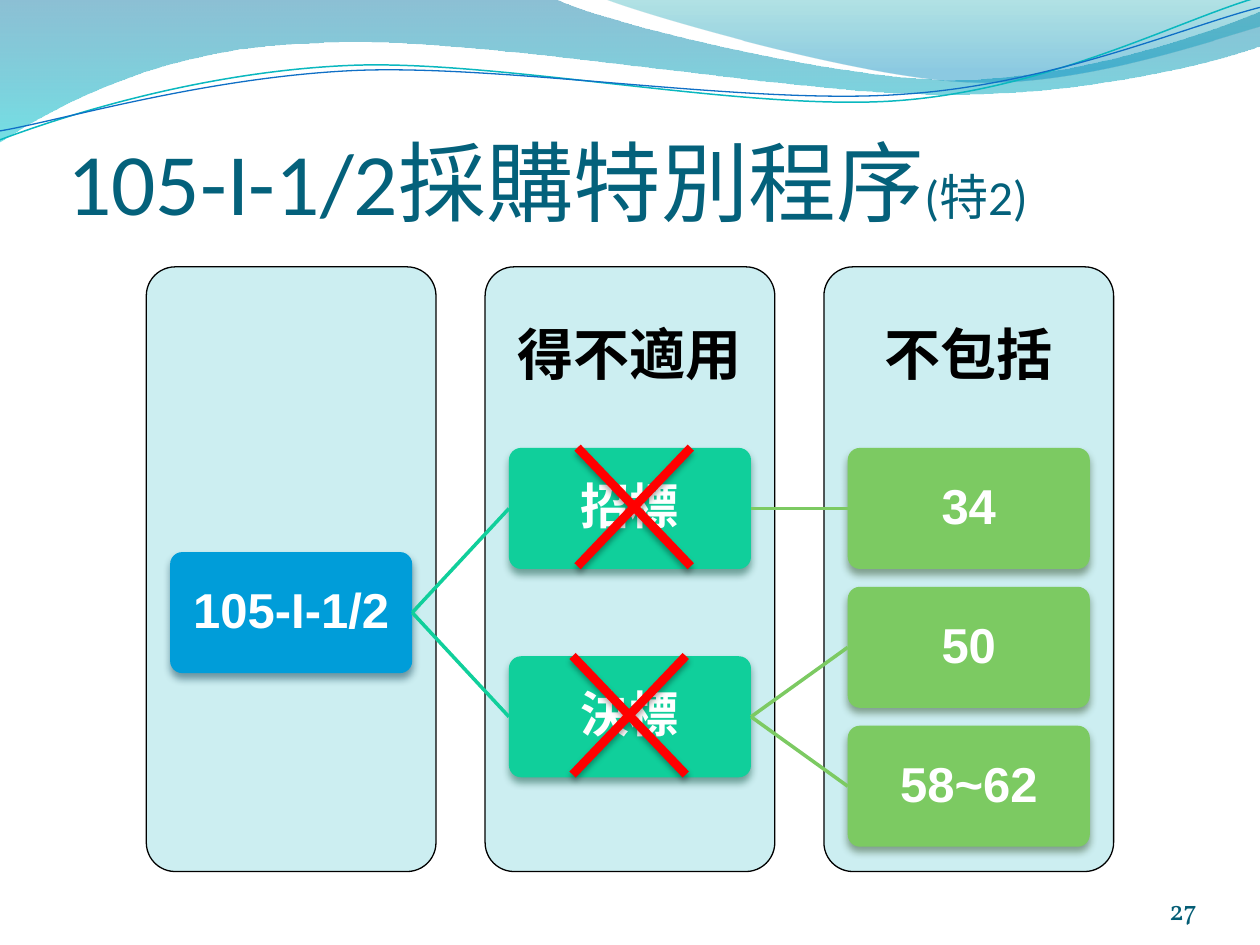
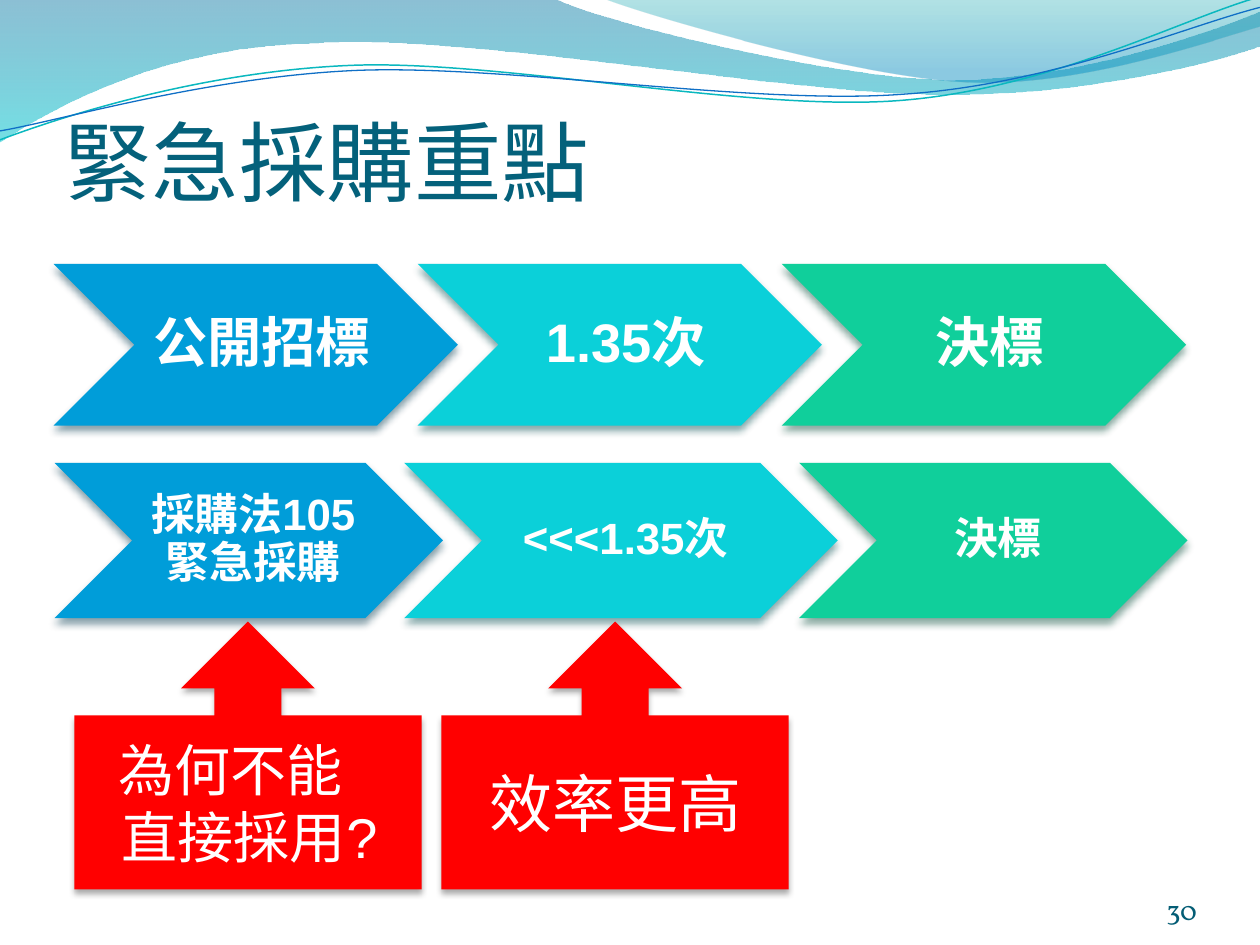
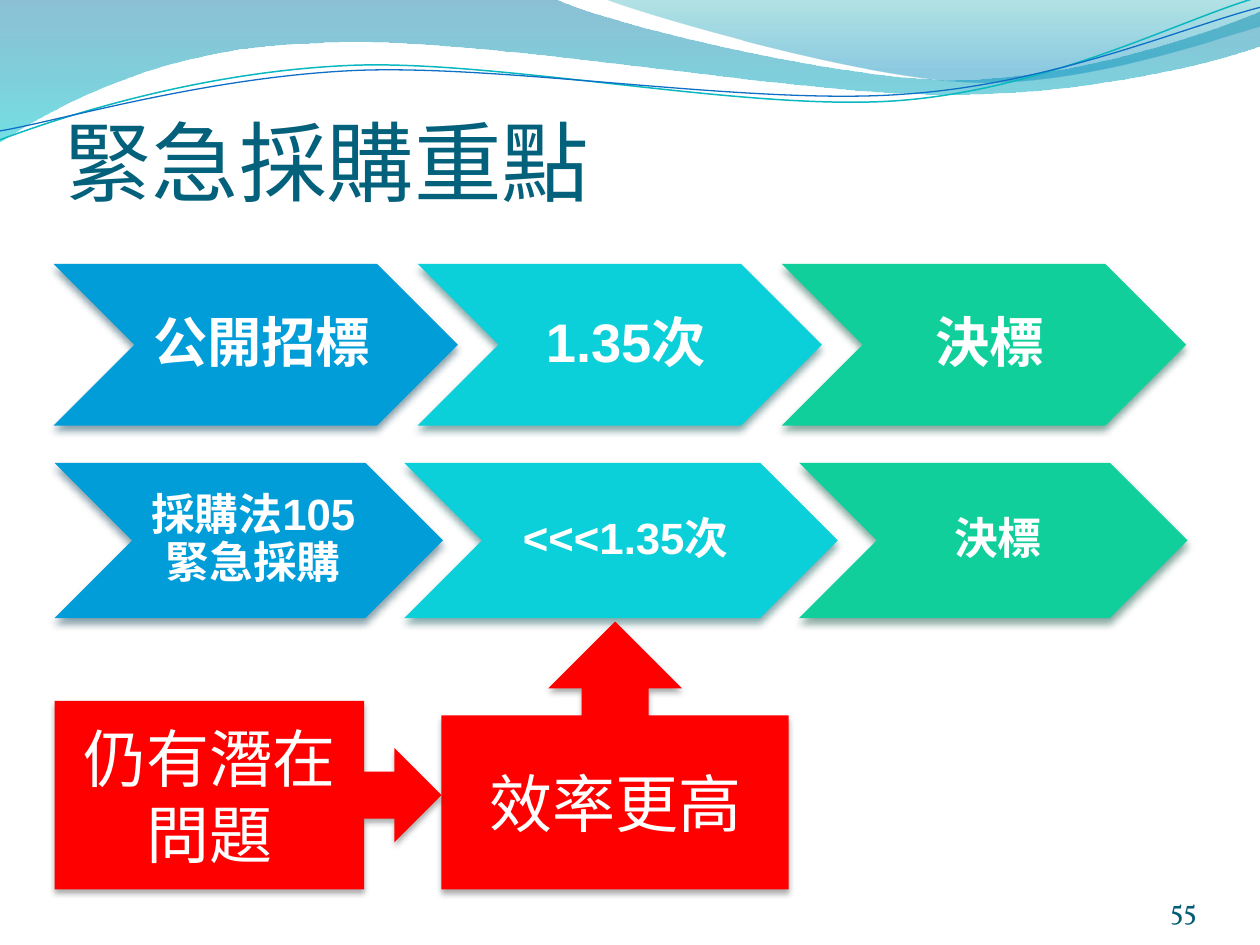
from dataclasses import dataclass

from pptx import Presentation
from pptx.dml.color import RGBColor
from pptx.enum.shapes import MSO_CONNECTOR, MSO_SHAPE
from pptx.enum.text import MSO_ANCHOR, PP_ALIGN
from pptx.oxml.ns import qn
from pptx.oxml.xmlchemy import OxmlElement
from pptx.shapes.autoshape import Shape
from pptx.slide import Slide
from pptx.util import Cm, Pt

ROUNDED = MSO_SHAPE.ROUNDED_RECTANGLE
CHEVRON = MSO_SHAPE.CHEVRON
CROSS = MSO_SHAPE.MATH_MULTIPLY
UP_CALLOUT = MSO_SHAPE.UP_ARROW_CALLOUT
RIGHT_CALLOUT = MSO_SHAPE.RIGHT_ARROW_CALLOUT
STRAIGHT = MSO_CONNECTOR.STRAIGHT
LEFT, CENTER, RIGHT = PP_ALIGN.LEFT, PP_ALIGN.CENTER, PP_ALIGN.RIGHT
MIDDLE, BOTTOM = MSO_ANCHOR.MIDDLE, MSO_ANCHOR.BOTTOM
LEFT_SIDE, RIGHT_SIDE = 1, 3

Point = tuple[float, float]
Margins = tuple[float, float, float, float]


@dataclass(frozen=True)
class TextStyle:
    size: float
    color: str
    font: str = "Arial"
    bold: bool = False
    align: PP_ALIGN = CENTER
    anchor: MSO_ANCHOR = MIDDLE
    spacing: float = 1.0
    margins: Margins = (0.25, 0.13, 0.25, 0.13)
    hanging: float = 0


@dataclass(frozen=True)
class Shadow:
    color: str
    opacity: int = 48
    blur: float = 4.5
    distance: float = 3


@dataclass(frozen=True)
class Accent:
    fill: str
    shadow: Shadow


@dataclass(frozen=True)
class Theme:
    blue = Accent("009DD9", Shadow("00374C"))
    cyan = Accent("0BD0D9", Shadow("024B4E"))
    teal = Accent("10CF9B", Shadow("044A37"))
    green = Accent("7CCA62", Shadow("2B4821"))
    red = Accent("FF0000", Shadow("000000", 32, 3.5, 2.2))
    column_fill = "CCEEF1"
    column_line = "000000"
    title = TextStyle(50, "04617B", "Calibri", align=LEFT, anchor=BOTTOM, margins=(0, 0.13, 0, 0))
    title_note_size = 28
    page_number = TextStyle(16, "045D75", "Vollkorn", align=RIGHT, anchor=BOTTOM, margins=(0, 0, 0, 0))
    heading = TextStyle(32, "000000", bold=True, spacing=0.9, margins=(0.63,) * 4)
    node = TextStyle(28, "FFFFFF", bold=True, spacing=0.9, margins=(0.05,) * 4)
    step = TextStyle(31, "FFFFFF", bold=True, spacing=0.9, margins=(0.36, 0.12, 0.12, 0.12))
    small_step = TextStyle(25, "FFFFFF", bold=True, spacing=0.9, margins=(0.23, 0.1, 0.05, 0.1))
    callout = TextStyle(36, "FFFFFF")
    small_callout = TextStyle(32, "FFFFFF", margins=(0, 0.13, 0.7, 0.13), hanging=0.77)


THEME = Theme()


@dataclass(frozen=True)
class Stop:
    position: float
    color: str
    opacity: int


@dataclass(frozen=True)
class Wave:
    start: Point
    legs: tuple[tuple[Point, ...], ...]
    stops: tuple[Stop, ...] = ()
    line: str = ""
    line_width: float = 0


@dataclass(frozen=True)
class Frame:
    left: float
    top: float
    width: float
    height: float


@dataclass(frozen=True)
class Node:
    text: str
    column: int
    row: float
    accent: Accent
    parent: int | None = None


@dataclass(frozen=True)
class Process:
    left: float
    top: float
    height: float
    overlap: float
    style: TextStyle
    steps: tuple[tuple[str, float], ...]


@dataclass(frozen=True)
class Callout:
    text: str
    preset: MSO_SHAPE
    frame: Frame
    style: TextStyle
    adjustments: tuple[float, ...] = ()


WAVES = (
    Wave((0, 0), (
        ((11.18, -0.03),),
        ((12.09, 0.43), (16.87, 1.6), (19.25, 1.6)),
        ((21.67, 1.6), (24.33, 0.66), (25.4, 0.23)),
        ((25.43, 0.91),),
        ((24.97, 1.12), (22.1, 1.93), (18.95, 1.9)),
        ((15.8, 1.9), (9.7, 0.71), (6.53, 0.86)),
        ((3.28, 0.91), (1.17, 2.11), (-0.03, 2.87)),
    ), stops=(Stop(0, "0074A1", 45), Stop(1, "00C6CF", 55))),
    Wave((12.17, -0.03), (
        ((12.93, 0.28), (17.32, 1.57), (19.53, 1.65)),
        ((21.74, 1.75), (24.41, 0.81), (25.4, 0.53)),
        ((25.4, 0),),
    ), stops=(Stop(0, "00A1A9", 30), Stop(0.8, "008BBF", 45))),
    Wave((0, 2.82), (
        ((1.22, 2.36), (4.01, 1.45), (7.04, 1.32)),
        ((10.03, 1.19), (15.06, 2.26), (18.11, 2.03)),
        ((21.16, 1.8), (23.83, 0.38), (25.35, -0.05)),
    ), line="0AB8BF", line_width=0.85),
    Wave((0, 2.64), (
        ((1.19, 2.44), (4.17, 1.55), (7.19, 1.42)),
        ((10.24, 1.3), (15.16, 2.13), (18.21, 1.9)),
        ((21.23, 1.7), (23.9, 0.53), (25.4, 0.15)),
    ), line="0F6FC6", line_width=0.75),
)

COLUMN = Frame(2.95, 5.38, 5.84, 12.19)
COLUMN_STEP = 6.83
COLUMN_HEADINGS = ("", "得不適用", "不包括")
HEADING_HEIGHT = 3.66
NODE = Frame(COLUMN.left + 0.48, 9.03, 4.88, 2.44)
NODE_STEP = 2.8
NODES = (
    Node("105-I-1/2", 0, 0.75, THEME.blue),
    Node("招標", 1, 0, THEME.teal, 0),
    Node("決標", 1, 1.5, THEME.teal, 0),
    Node("34", 2, 0, THEME.green, 1),
    Node("50", 2, 1, THEME.green, 2),
    Node("58~62", 2, 2, THEME.green, 2),
)
CROSSES = (Frame(10.59, 7.92, 4.39, 4.6), Frame(10.49, 12.12, 4.39, 4.6))

STEP_ACCENTS = (THEME.blue, THEME.cyan, THEME.teal)
PROCESSES = (
    Process(1.08, 5.32, 3.26, 0.81, THEME.step,
            (("公開招標", 8.15), ("1.35次", 8.15), ("決標", 8.15))),
    Process(1.1, 9.33, 3.13, 0.78, THEME.small_step,
            (("採購法105緊急採購", 7.83), ("<<<1.35次", 8.74), ("決標", 7.83))),
)
EFFICIENCY = Callout("效率更高", UP_CALLOUT, Frame(8.9, 12.53, 7, 5.4), THEME.callout)
WHY_NOT = Callout("為何不能\v直接採用?", UP_CALLOUT, Frame(1.5, 12.53, 7, 5.4), THEME.small_callout)
HIDDEN_PROBLEM = Callout("仍有潛在問題", RIGHT_CALLOUT, Frame(1.1, 14.13, 7.8, 3.8),
                         THEME.callout, (0.25, 0.25, 0.25, 0.8))


def rgb(color: str) -> RGBColor:
    return RGBColor.from_string(color)


def lengths(frame: Frame) -> tuple[Cm, Cm, Cm, Cm]:
    return Cm(frame.left), Cm(frame.top), Cm(frame.width), Cm(frame.height)


def set_opacity(color_element, percent: int) -> None:
    alpha = OxmlElement("a:alpha")
    alpha.set("val", str(percent * 1000))
    color_element.append(alpha)


def add_shadow(shape: Shape, shadow: Shadow) -> None:
    outer = OxmlElement("a:outerShdw")
    outer.set("blurRad", str(Pt(shadow.blur)))
    outer.set("dist", str(Pt(shadow.distance)))
    outer.set("dir", "5400000")
    outer.set("rotWithShape", "0")
    color = OxmlElement("a:srgbClr")
    color.set("val", shadow.color)
    set_opacity(color, shadow.opacity)
    outer.append(color)
    shape.element.spPr.find(qn("a:effectLst")).append(outer)


def write(shape: Shape, text: str, style: TextStyle) -> None:
    frame = shape.text_frame
    frame.word_wrap = True
    frame.vertical_anchor = style.anchor
    frame.margin_left, frame.margin_top, frame.margin_right, frame.margin_bottom = map(Cm, style.margins)
    para = frame.paragraphs[0]
    para.text = text
    para.alignment = style.align
    para.line_spacing = style.spacing
    if style.hanging:
        properties = para._p.get_or_add_pPr()
        properties.set("marL", str(Cm(style.hanging)))
        properties.set("indent", str(-Cm(style.hanging)))
    for span in para.runs:
        span.font.size = Pt(style.size)
        span.font.name = style.font
        span.font.bold = style.bold
        span.font.color.rgb = rgb(style.color)


def add_text(page: Slide, frame: Frame, text: str, style: TextStyle) -> Shape:
    box = page.shapes.add_textbox(*lengths(frame))
    write(box, text, style)
    return box


def add_preset(page: Slide, preset: MSO_SHAPE, frame: Frame, fill: str,
               shadow: Shadow | None = None, adjustments: tuple[float, ...] = ()) -> Shape:
    shape = page.shapes.add_shape(preset, *lengths(frame))
    for index, value in enumerate(adjustments):
        shape.adjustments[index] = value
    shape.fill.solid()
    shape.fill.fore_color.rgb = rgb(fill)
    shape.line.fill.background()
    shape.shadow.inherit = False
    if shadow:
        add_shadow(shape, shadow)
    return shape


def bend(shape: Shape, legs: tuple[tuple[Point, ...], ...]) -> None:
    segments = iter(list(shape.element.spPr.iter(qn("a:lnTo"))))
    for leg in legs:
        first, *others = [next(segments) for _ in leg]
        if not others:
            continue
        curve = OxmlElement("a:cubicBezTo")
        first.addprevious(curve)
        for segment in (first, *others):
            curve.append(segment[0])
            segment.getparent().remove(segment)


def add_wave(page: Slide, wave: Wave) -> None:
    builder = page.shapes.build_freeform(*map(Cm, wave.start))
    corners = [(Cm(x), Cm(y)) for leg in wave.legs for x, y in leg]
    builder.add_line_segments(corners, close=bool(wave.stops))
    shape = builder.convert_to_shape()
    bend(shape, wave.legs)
    shape.shadow.inherit = False
    if wave.stops:
        shape.line.fill.background()
        shape.fill.gradient()
        shape.fill.gradient_angle = 270
        for stop, settings in zip(shape.fill.gradient_stops, wave.stops):
            stop.position = settings.position
            stop.color.rgb = rgb(settings.color)
        colors = shape.element.spPr.iter(qn("a:srgbClr"))
        for color, settings in zip(list(colors), wave.stops):
            set_opacity(color, settings.opacity)
    else:
        shape.fill.background()
        shape.line.color.rgb = rgb(wave.line)
        shape.line.width = Pt(wave.line_width)


def add_page(deck, title: str, title_left: float, title_top: float, number: int, note: str = "") -> Slide:
    page = deck.slides.add_slide(deck.slide_layouts[6])
    for wave in WAVES:
        add_wave(page, wave)
    box = add_text(page, Frame(title_left, title_top, 22.86, 3.18), title, THEME.title)
    if note:
        span = box.text_frame.paragraphs[0].add_run()
        span.text = note
        span.font.size = Pt(THEME.title_note_size)
        span.font.name = THEME.title.font
        span.font.color.rgb = rgb(THEME.title.color)
    add_text(page, Frame(22.02, 17.65, 2.11, 1.02), str(number), THEME.page_number)
    return page


def add_column(page: Slide, index: int, heading: str) -> None:
    left = COLUMN.left + index * COLUMN_STEP
    frame = Frame(left, COLUMN.top, COLUMN.width, COLUMN.height)
    column = add_preset(page, ROUNDED, frame, THEME.column_fill, adjustments=(0.1,))
    column.line.color.rgb = rgb(THEME.column_line)
    column.line.width = Pt(0.75)
    if heading:
        add_text(page, Frame(left, COLUMN.top, COLUMN.width, HEADING_HEIGHT), heading, THEME.heading)


def add_node(page: Slide, node: Node) -> Shape:
    frame = Frame(NODE.left + node.column * COLUMN_STEP, NODE.top + node.row * NODE_STEP,
                  NODE.width, NODE.height)
    box = add_preset(page, ROUNDED, frame, node.accent.fill, node.accent.shadow, (0.1,))
    write(box, node.text, THEME.node)
    return box


def add_branch(page: Slide, parent: Shape, child: Shape, color: str) -> None:
    branch = page.shapes.add_connector(STRAIGHT, 0, 0, 0, 0)
    branch.begin_connect(parent, RIGHT_SIDE)
    branch.end_connect(child, LEFT_SIDE)
    branch.line.color.rgb = rgb(color)
    branch.line.width = Pt(2)
    branch.element.spPr.append(OxmlElement("a:effectLst"))


def add_process(page: Slide, process: Process) -> None:
    left = process.left
    for (text, width), accent in zip(process.steps, STEP_ACCENTS):
        frame = Frame(left, process.top, width, process.height)
        write(add_preset(page, CHEVRON, frame, accent.fill, accent.shadow), text, process.style)
        left += width - process.overlap


def add_callout(page: Slide, callout: Callout) -> None:
    shape = add_preset(page, callout.preset, callout.frame, THEME.red.fill, THEME.red.shadow,
                       callout.adjustments)
    write(shape, callout.text, callout.style)


def build_special_procedure(deck) -> None:
    page = add_page(deck, "105-I-1/2採購特別程序", 1.36, 1.52, 27, "(特2)")
    for index, heading in enumerate(COLUMN_HEADINGS):
        add_column(page, index, heading)
    boxes = [add_node(page, node) for node in NODES]
    for node, box in zip(NODES, boxes):
        if node.parent is not None:
            add_branch(page, boxes[node.parent], box, node.accent.fill)
    for frame in CROSSES:
        add_preset(page, CROSS, frame, THEME.red.fill, THEME.red.shadow, (0.04,))


def build_urgent_purchase(deck, number: int, callouts: tuple[Callout, ...]) -> None:
    page = add_page(deck, "緊急採購重點", 1.3, 1.12, number)
    for process in PROCESSES:
        add_process(page, process)
    for callout in callouts:
        add_callout(page, callout)


def main() -> None:
    deck = Presentation()
    deck.slide_width, deck.slide_height = Cm(25.4), Cm(19.05)
    build_special_procedure(deck)
    build_urgent_purchase(deck, 30, (EFFICIENCY, WHY_NOT))
    build_urgent_purchase(deck, 55, (EFFICIENCY, HIDDEN_PROBLEM))
    deck.save("out.pptx")


if __name__ == "__main__":
    main()
